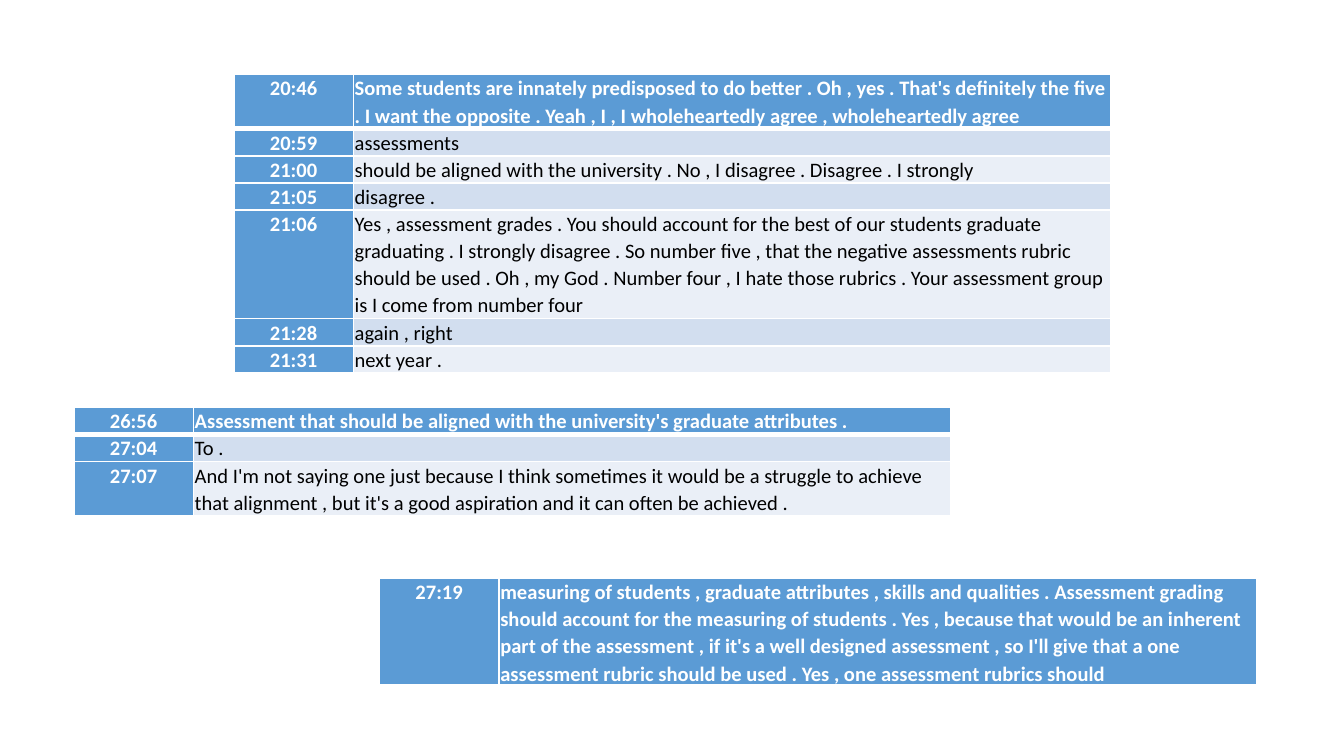
import dataclasses

import lxml.etree
import pptx
import pptx.dml.color
import pptx.enum.text
import pptx.oxml.ns
import pptx.util

Pt = pptx.util.Pt
Color = pptx.dml.color.RGBColor.from_string
Align = pptx.enum.text.PP_ALIGN


@dataclasses.dataclass(frozen=True)
class Theme:
    font: str = "Calibri"
    size: float = 11
    line_spacing: float = 1.07
    space_after: float = 8
    inset: float = 0.75
    accent: str = "5B9BD5"
    bands: tuple = ("D2DEEF", "EAEFF7")
    light: str = "FFFFFF"
    dark: str = "000000"
    rule: float = 1
    header_rule: float = 3


THEME = Theme()
LINE_HEIGHT = 13.8
COLUMN_WIDTHS = (64, 406)

STUDENT_VIEWS = [
    ("20:46", "Some students are innately predisposed to do better . Oh , yes . That's definitely the five "
              ". I want the opposite . Yeah , I , I wholeheartedly agree , wholeheartedly agree", 2),
    ("20:59", "assessments", 1),
    ("21:00", "should be aligned with the university . No , I disagree . Disagree . I strongly", 1),
    ("21:05", "disagree .", 1),
    ("21:06", "Yes , assessment grades . You should account for the best of our students graduate "
              "graduating . I strongly disagree . So number five , that the negative assessments rubric "
              "should be used . Oh , my God . Number four , I hate those rubrics . Your assessment group "
              "is I come from number four", 4),
    ("21:28", "again , right", 1),
    ("21:31", "next year .", 1),
]
ALIGNMENT_VIEWS = [
    ("26:56", "Assessment that should be aligned with the university's graduate attributes .", 1),
    ("27:04", "To .", 1),
    ("27:07", "And I'm not saying one just because I think sometimes it would be a struggle to achieve "
              "that alignment , but it's a good aspiration and it can often be achieved .", 2),
]
MEASURING_VIEWS = [
    ("27:19", "measuring of students , graduate attributes , skills and qualities . Assessment grading "
              "should account for the measuring of students . Yes , because that would be an inherent "
              "part of the assessment , if it's a well designed assessment , so I'll give that a one "
              "assessment rubric should be used . Yes , one assessment rubrics should", 4),
]


def add_borders(cell, row_index):
    widths = {
        "lnL": THEME.rule,
        "lnR": THEME.rule,
        "lnT": THEME.header_rule if row_index == 1 else THEME.rule,
        "lnB": THEME.header_rule if row_index == 0 else THEME.rule,
    }
    qn = pptx.oxml.ns.qn
    properties = cell._tc.get_or_add_tcPr()
    for side, width in widths.items():
        line = lxml.etree.SubElement(properties, qn(f"a:{side}"), w=str(Pt(width)))
        fill = lxml.etree.SubElement(line, qn("a:solidFill"))
        lxml.etree.SubElement(fill, qn("a:srgbClr"), val=THEME.light)


def format_cell(cell, text, row_index, is_time):
    emphasised = is_time or row_index == 0
    add_borders(cell, row_index)
    cell.fill.solid()
    band = THEME.bands[(row_index - 1) % 2]
    cell.fill.fore_color.rgb = Color(THEME.accent if emphasised else band)
    cell.margin_left = cell.margin_right = Pt(THEME.inset)
    cell.margin_top = cell.margin_bottom = Pt(0)
    cell.text = text
    para = cell.text_frame.paragraphs[0]
    para.alignment = Align.CENTER if is_time else Align.LEFT
    para.line_spacing = THEME.line_spacing
    para.space_after = Pt(THEME.space_after)
    para.font.name = THEME.font
    para.font.size = Pt(THEME.size)
    para.font.bold = emphasised
    para.font.color.rgb = Color(THEME.light if emphasised else THEME.dark)


def add_transcript(page, left, top, entries):
    height = LINE_HEIGHT * sum(lines for _, _, lines in entries)
    frame = page.shapes.add_table(
        len(entries), len(COLUMN_WIDTHS), Pt(left), Pt(top), Pt(sum(COLUMN_WIDTHS)), Pt(height)
    )
    table = frame.table
    table.first_col = True
    for column, width in zip(table.columns, COLUMN_WIDTHS):
        column.width = Pt(width)
    for row_index, (time, speech, lines) in enumerate(entries):
        table.rows[row_index].height = Pt(LINE_HEIGHT * lines)
        format_cell(table.cell(row_index, 0), time, row_index, True)
        format_cell(table.cell(row_index, 1), speech, row_index, False)


def main():
    deck = pptx.Presentation()
    deck.slide_width = Pt(720)
    deck.slide_height = Pt(405)
    page = deck.slides.add_slide(deck.slide_layouts[6])
    add_transcript(page, 125.3, 39.9, STUDENT_VIEWS)
    add_transcript(page, 39.6, 218.2, ALIGNMENT_VIEWS)
    add_transcript(page, 203.3, 309.8, MEASURING_VIEWS)
    deck.save("out.pptx")


if __name__ == "__main__":
    main()
